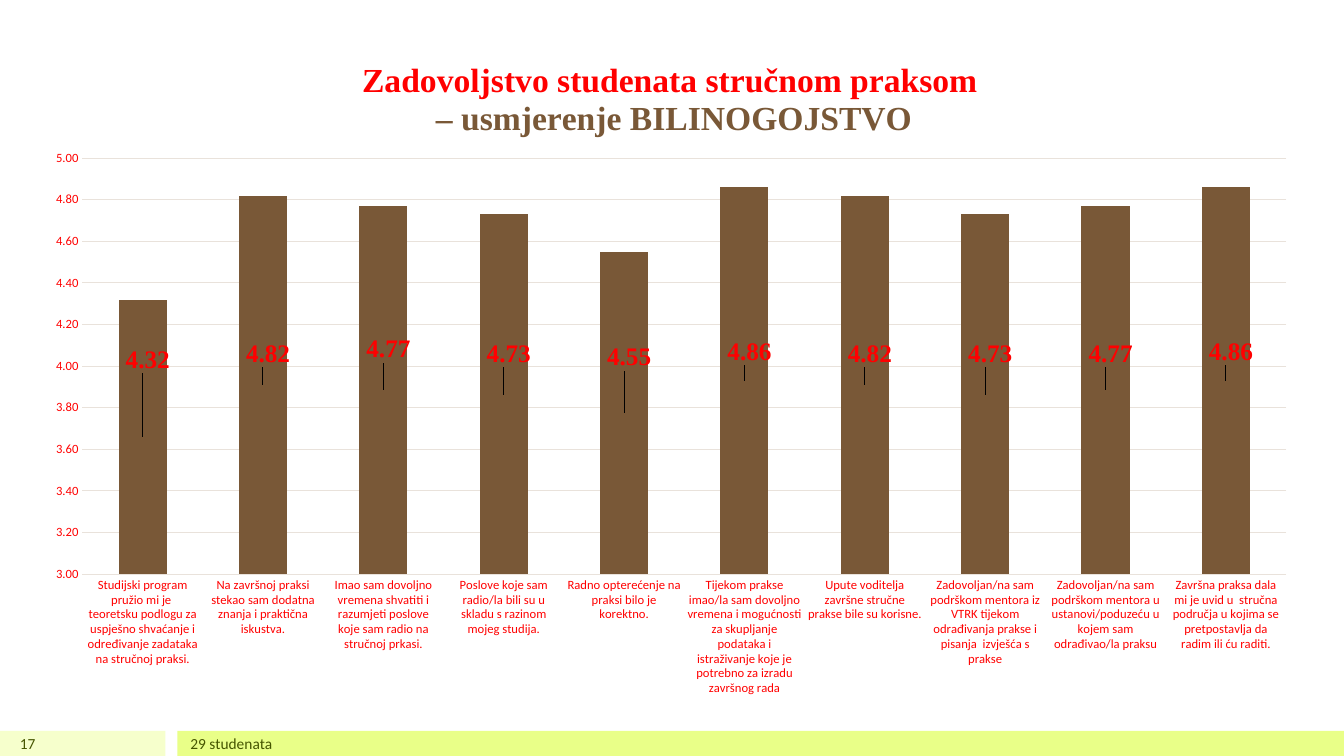
"""Build a slide charting student satisfaction with professional practice."""
from lxml import etree
from pptx import Presentation
from pptx.chart.data import CategoryChartData
from pptx.dml.color import RGBColor
from pptx.enum.chart import XL_CHART_TYPE, XL_LABEL_POSITION, XL_TICK_MARK
from pptx.enum.shapes import MSO_SHAPE
from pptx.enum.text import MSO_ANCHOR, PP_ALIGN
from pptx.oxml import parse_xml
from pptx.oxml.ns import nsdecls, qn
from pptx.util import Inches, Pt

COLUMNS = XL_CHART_TYPE.COLUMN_CLUSTERED
CENTER = XL_LABEL_POSITION.CENTER
NO_TICK = XL_TICK_MARK.NONE
RECTANGLE = MSO_SHAPE.RECTANGLE
MIDDLE = MSO_ANCHOR.MIDDLE
LEFT, RIGHT = PP_ALIGN.LEFT, PP_ALIGN.RIGHT

RED, BROWN, DARK, GRID, OLIVE = "FF0000", "795837", "4D3E2F", "E9E2DB", "455500"
SANS, SERIF = "Calibri", "Times New Roman"

TITLE = [("Zadovoljstvo studenata stručnom praksom ", RED),
         ("– usmjerenje BILINOGOJSTVO", BROWN)]
# fields: statement, mean score, height of the label on the value axis
SCORES = [
    ("Studijski program pružio mi je  teoretsku podlogu za uspješno shvaćanje i "
     "određivanje zadataka na stručnoj praksi.", 4.32, 4.03),
    ("Na završnoj praksi stekao sam dodatna znanja i praktična iskustva.", 4.82, 4.06),
    ("Imao sam dovoljno vremena shvatiti i razumjeti poslove koje sam radio na "
     "stručnoj prkasi.", 4.77, 4.08),
    ("Poslove koje sam radio/la bili su u skladu s razinom mojeg studija.", 4.73, 4.06),
    ("Radno opterećenje na praksi bilo je korektno.", 4.55, 4.04),
    ("Tijekom prakse imao/la sam dovoljno vremena i mogućnosti za skupljanje podataka i "
     "istraživanje koje je potrebno za izradu završnog rada", 4.86, 4.07),
    ("Upute voditelja završne stručne prakse bile su korisne.", 4.82, 4.06),
    ("Zadovoljan/na sam podrškom mentora iz VTRK tijekom odrađivanja prakse i "
     "pisanja  izvješća s prakse", 4.73, 4.06),
    ("Zadovoljan/na sam podrškom mentora u ustanovi/poduzeću u kojem sam "
     "odrađivao/la praksu", 4.77, 4.06),
    ("Završna praksa dala mi je uvid u  stručna područja u kojima se pretpostavlja da "
     "radim ili ću raditi.", 4.86, 4.07),
]
AXIS_MIN, AXIS_MAX = 3, 5
CHART_BOX = (0.31, 0.33, 12.7, 6.7)
PLOT_LEFT, PLOT_TOP, PLOT_WIDTH, PLOT_HEIGHT = 0.04, 0.185, 0.94, 0.616
FOOTER_TOP, FOOTER_HEIGHT = 7.25, 0.25
FOOTER_BARS = [(0, 1.64, "F6FFCC"), (1.76, 11.57, "E9FF88")]
FOOTER_TEXTS = [(0, 0.45, "17", RIGHT), (1.79, 10, "29 studenata", LEFT)]


def color(hex_value):
    return RGBColor.from_string(hex_value)


def style_font(font, size, hex_value, name, bold=False):
    font.size, font.name, font.bold = Pt(size), name, bold
    font.color.rgb = color(hex_value)


def set_layout(parent, index, x, y, width=None, height=None):
    for old in parent.findall(qn("c:layout")):
        parent.remove(old)
    layout = parse_xml(f"<c:layout {nsdecls('c')}><c:manualLayout/></c:layout>")
    entries = []
    if width:
        entries.append(("layoutTarget", "inner"))
    if parent.tag != qn("c:dLbl"):
        entries += [("xMode", "edge"), ("yMode", "edge")]
    entries += [("x", x), ("y", y)]
    if width:
        entries += [("w", width), ("h", height)]
    for tag, value in entries:
        etree.SubElement(layout[0], qn(f"c:{tag}")).set("val", str(value))
    parent.insert(index, layout)


def add_footer(slide):
    for left, width, fill in FOOTER_BARS:
        bar = slide.shapes.add_shape(RECTANGLE, Inches(left), Inches(FOOTER_TOP),
                                     Inches(width), Inches(FOOTER_HEIGHT))
        bar.shadow.inherit = False
        bar.fill.solid()
        bar.fill.fore_color.rgb = color(fill)
        bar.line.fill.background()
    for left, width, words, align in FOOTER_TEXTS:
        frame = slide.shapes.add_textbox(Inches(left), Inches(FOOTER_TOP), Inches(width),
                                         Inches(FOOTER_HEIGHT)).text_frame
        frame.word_wrap = True
        frame.vertical_anchor = MIDDLE
        paragraph = frame.paragraphs[0]
        paragraph.alignment = align
        run = paragraph.add_run()
        run.text = words
        style_font(run.font, 11, OLIVE, SANS)


def add_title(chart):
    chart.has_title = True
    frame = chart.chart_title.text_frame
    for number, (words, hue) in enumerate(TITLE):
        paragraph = frame.add_paragraph() if number else frame.paragraphs[0]
        run = paragraph.add_run()
        run.text = words
        style_font(run.font, 24, hue, SERIF, True)
    set_layout(chart.chart_title._element, 1, 0.256, 0.035)


def style_axes(chart):
    for axis in (chart.category_axis, chart.value_axis):
        axis.major_tick_mark = axis.minor_tick_mark = NO_TICK
        axis.format.line.fill.background()
        style_font(axis.tick_labels.font, 9, RED, SANS)
    scale = chart.value_axis
    scale.minimum_scale, scale.maximum_scale, scale.major_unit = AXIS_MIN, AXIS_MAX, 0.2
    scale.tick_labels.number_format = "0.00"
    scale.tick_labels.number_format_is_linked = False
    gridline = scale.major_gridlines.format.line
    gridline.width = Pt(0.75)
    gridline.color.rgb = color(GRID)


def add_labels(series):
    for number in range(len(SCORES)):
        label = series.points[number].data_label
        style_font(label.font, 18, RED, SERIF, True)
        label.position = CENTER
    for node, (_, score, height) in zip(series._element.iter(qn("c:dLbl")), SCORES):
        rise = (height - (score + AXIS_MIN) / 2) / (AXIS_MAX - AXIS_MIN)
        set_layout(node, 1, 0.004, round(-rise * PLOT_HEIGHT, 3))
        node.insert(2, parse_xml(
            f'<c:numFmt {nsdecls("c")} formatCode="0.00" sourceLinked="0"/>'))
        node.insert(3, parse_xml(
            f'<c:spPr {nsdecls("c", "a")}>'
            '<a:solidFill><a:srgbClr val="FFFFFF"/></a:solidFill><a:ln w="12700">'
            f'<a:solidFill><a:srgbClr val="{DARK}"/></a:solidFill></a:ln></c:spPr>'))


def add_score_chart(slide):
    data = CategoryChartData(number_format="0.00")
    data.categories = [statement for statement, _, _ in SCORES]
    data.add_series("Series 1", [score for _, score, _ in SCORES])
    chart = slide.shapes.add_chart(COLUMNS, *map(Inches, CHART_BOX), data).chart
    chart.has_legend = False
    style_font(chart.font, 10, DARK, SANS)
    add_title(chart)
    style_axes(chart)
    plot = chart.plots[0]
    plot.gap_width = 150
    plot.vary_by_categories = False
    columns = plot.series[0]
    columns.format.fill.solid()
    columns.format.fill.fore_color.rgb = color(BROWN)
    add_labels(columns)
    plot_area = chart._chartSpace.find(".//" + qn("c:plotArea"))
    set_layout(plot_area, 0, PLOT_LEFT, PLOT_TOP, PLOT_WIDTH, PLOT_HEIGHT)


def main():
    deck = Presentation()
    deck.slide_width, deck.slide_height = Inches(13.33), Inches(7.5)
    slide = deck.slides.add_slide(deck.slide_layouts[6])
    add_footer(slide)
    add_score_chart(slide)
    deck.save("out.pptx")


if __name__ == "__main__":
    main()
